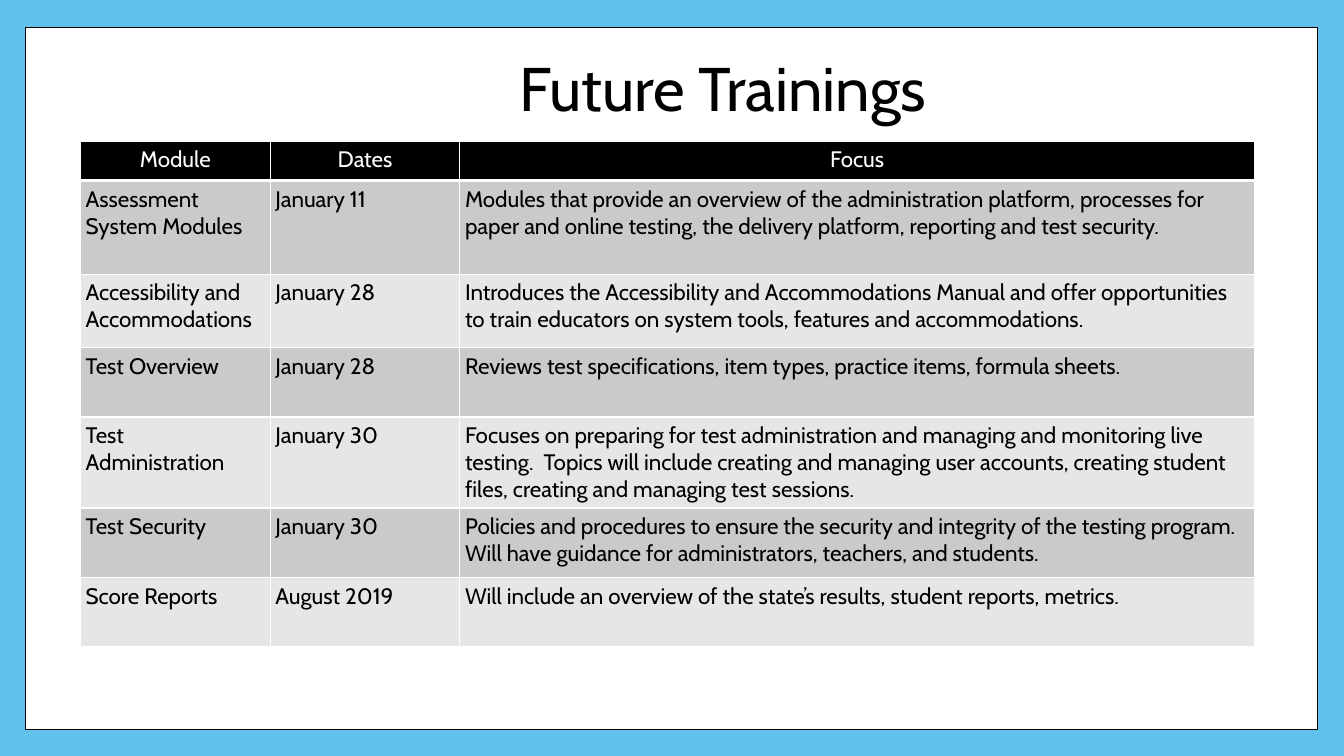
from lxml.etree import SubElement
from pptx import Presentation
from pptx.dml.color import RGBColor
from pptx.enum.shapes import MSO_SHAPE as Shape
from pptx.enum.text import MSO_ANCHOR as Anchor, PP_ALIGN as Align
from pptx.oxml.ns import qn
from pptx.util import Cm, Pt

SKY = RGBColor(0x62, 0xC1, 0xEB)
BLACK = RGBColor(0, 0, 0)
WHITE = RGBColor(0xFF, 0xFF, 0xFF)
DARK_BAND = RGBColor(0xCA, 0xCA, 0xCA)
LIGHT_BAND = RGBColor(0xE6, 0xE6, 0xE6)

COLUMN_WIDTHS = [4.78, 4.78, 20.02]
ROW_HEIGHTS = [0.99, 2.36, 1.85, 1.75, 2.29, 1.75, 1.75]
TRAININGS = [
    ("Module", "Dates", "Focus"),
    ("Assessment System Modules", "January 11",
     "Modules that provide an overview of the administration platform, processes for "
     "paper and online testing, the delivery platform, reporting and test security."),
    ("Accessibility and Accommodations", "January 28",
     "Introduces the Accessibility and Accommodations Manual and offer opportunities "
     "to train educators on system tools, features and accommodations."),
    ("Test Overview", "January 28",
     "Reviews test specifications, item types, practice items, formula sheets."),
    ("Test Administration", "January 30",
     "Focuses on preparing for test administration and managing and monitoring live "
     "testing.  Topics will include creating and managing user accounts, creating student "
     "files, creating and managing test sessions."),
    ("Test Security", "January 30",
     "Policies and procedures to ensure the security and integrity of the testing program.  "
     "Will have guidance for administrators, teachers, and students."),
    ("Score Reports", "August 2019",
     "Will include an overview of the state’s results, student reports, metrics."),
]


class TrainingPage:
    font = "Cabin"
    inset = Cm(0.13)

    def __init__(self, deck):
        self.page = deck.slides.add_slide(deck.slide_layouts[6])
        fill = self.page.background.fill
        fill.solid()
        fill.fore_color.rgb = SKY

    def style_text(self, frame, size, color, align):
        for para in frame.paragraphs:
            para.alignment = align
            for span in para.runs:
                span.font.name = self.font
                span.font.size = Pt(size)
                span.font.color.rgb = color

    def set_insets(self, holder):
        holder.margin_left = holder.margin_right = self.inset
        holder.margin_top = holder.margin_bottom = self.inset

    def panel(self, left, top, width, height):
        panel = self.page.shapes.add_shape(
            Shape.RECTANGLE, Cm(left), Cm(top), Cm(width), Cm(height))
        panel.shadow.inherit = False
        panel.fill.solid()
        panel.fill.fore_color.rgb = WHITE
        panel.line.color.rgb = BLACK
        panel.line.width = Pt(1)

    def title(self, text, left, top, width, height):
        box = self.page.shapes.add_textbox(Cm(left), Cm(top), Cm(width), Cm(height))
        frame = box.text_frame
        frame.word_wrap = True
        frame.vertical_anchor = Anchor.MIDDLE
        self.set_insets(frame)
        frame.text = text
        frame.paragraphs[0].line_spacing = 0.9
        self.style_text(frame, 44, BLACK, Align.CENTER)

    def borders(self, cell, bottoms):
        """Draw white borders; the bottom one may be thicker."""
        properties = cell._tc.get_or_add_tcPr()
        widths = {"a:lnL": 1, "a:lnR": 1, "a:lnT": 1, "a:lnB": bottoms}
        for tag, width in widths.items():
            line = SubElement(properties, qn(tag), w=str(Pt(width)))
            SubElement(SubElement(line, qn("a:solidFill")), qn("a:srgbClr"), val=str(WHITE))

    def table(self, rows, left, top, widths, heights):
        table = self.page.shapes.add_table(
            len(rows), len(widths), Cm(left), Cm(top),
            Cm(sum(widths)), Cm(sum(heights))).table
        for column, width in zip(table.columns, widths):
            column.width = Cm(width)
        for index, (row, height, texts) in enumerate(zip(table.rows, heights, rows)):
            row.height = Cm(height)
            header = index == 0
            band = BLACK if header else DARK_BAND if index % 2 else LIGHT_BAND
            for cell, text in zip(row.cells, texts):
                self.set_insets(cell)
                self.borders(cell, 3 if header else 1)
                cell.fill.solid()
                cell.fill.fore_color.rgb = band
                cell.text_frame.text = text
                self.style_text(cell.text_frame, 16, WHITE if header else BLACK,
                                Align.CENTER if header else Align.LEFT)


def main():
    deck = Presentation()
    deck.slide_width, deck.slide_height = Cm(33.87), Cm(19.05)
    page = TrainingPage(deck)

    # Frame and heading
    page.panel(0.64, 0.69, 32.56, 17.7)
    page.title("Future Trainings", 2.69, -0.28, 31.06, 5.18)

    # Schedule
    page.table(TRAININGS, 2.03, 3.56, COLUMN_WIDTHS, ROW_HEIGHTS)

    deck.save("out.pptx")


if __name__ == "__main__":
    main()
